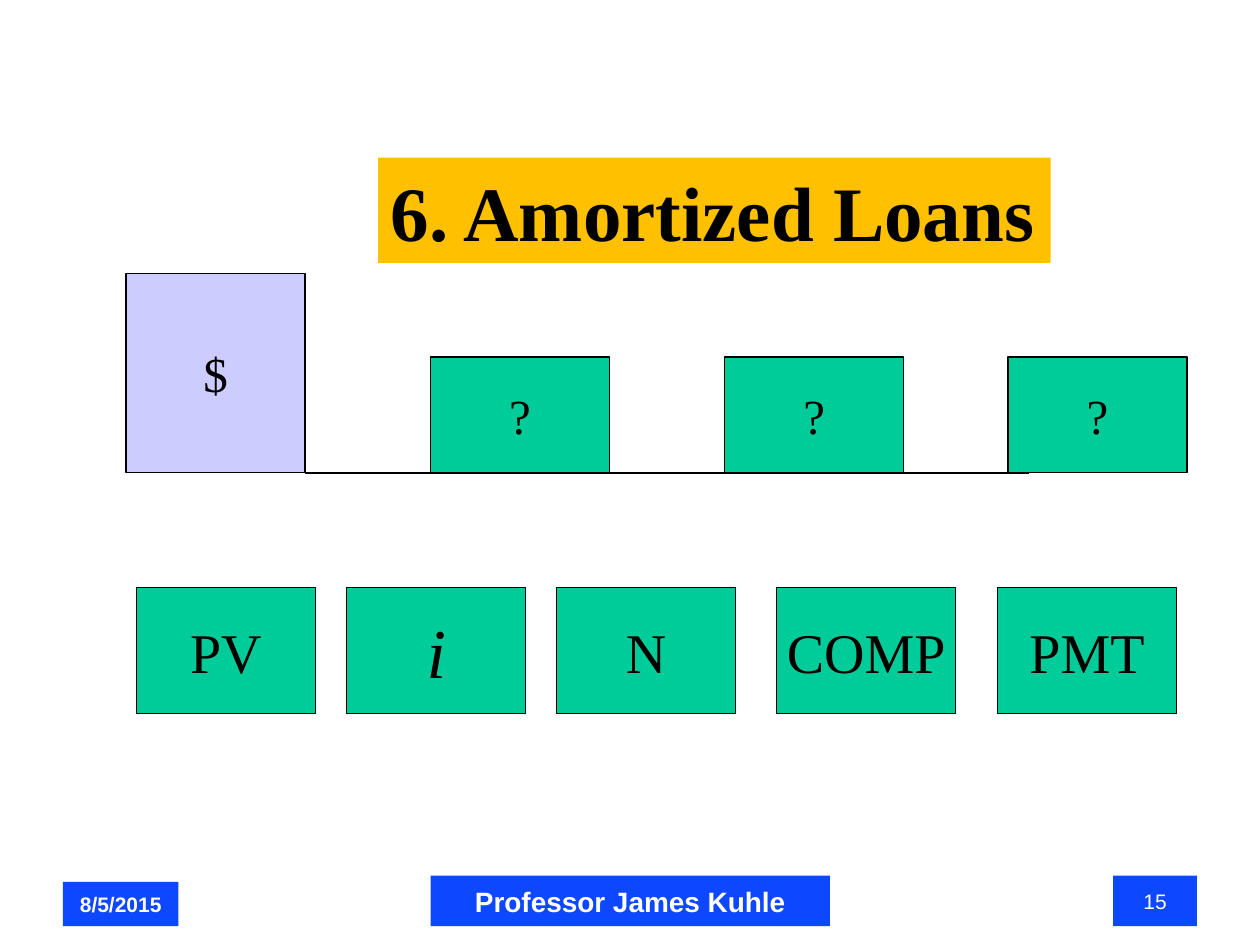
"""Build the amortized loans slide: a cash flow line above a row of calculator keys."""
from pptx import Presentation
from pptx.dml.color import RGBColor
from pptx.enum.shapes import MSO_CONNECTOR as Link, MSO_SHAPE as Kind
from pptx.enum.text import MSO_ANCHOR as Anchor, MSO_AUTO_SIZE as Fit, PP_ALIGN as Align
from pptx.oxml.ns import qn
from pptx.util import Cm, Pt
from lxml.etree import SubElement

BLACK = RGBColor(0x00, 0x00, 0x00)
WHITE = RGBColor(0xFF, 0xFF, 0xFF)
GREEN = RGBColor(0x00, 0xCC, 0x99)
LILAC = RGBColor(0xCC, 0xCC, 0xFF)
GOLD = RGBColor(0xFF, 0xC0, 0x00)
BLUE = RGBColor(0x0D, 0x47, 0xFF)
SERIF, SANS = "Times New Roman", "Arial"

TITLE = "6. Amortized Loans"
FLOWS = [("$", 2.54, 4.02, LILAC), ("?", 8.68, 2.33, GREEN),
         ("?", 14.61, 2.33, GREEN), ("?", 20.32, 2.33, GREEN)]
KEYS = [("PV", 2.75), ("i", 6.99), ("N", 11.22), ("COMP", 15.66), ("PMT", 20.11)]
FOOTER = [("8/5/2015", 1.27, 2.33, 0.89, 12, True),
          ("Professor James Kuhle", 8.68, 8.05, 1.02, 16, True),
          ("15", 22.44, 1.69, 1.02, 12, False)]
WIDE = 3.61
BASE = 9.53
KEY_TOP, KEY_TALL = 11.85, 2.54
FOOT = 18.67


def write(shape, text, face, size, color, bold=False, slant=False, align=Align.CENTER):
    frame = shape.text_frame
    frame.text = text
    para = frame.paragraphs[0]
    para.alignment = align
    font = para.font
    font.name, font.size, font.bold, font.italic = face, Pt(size), bold, slant
    font.color.rgb = color
    return frame


def add_box(slide, kind, place, fill, edge=None):
    box = slide.shapes.add_shape(kind, *map(Cm, place))
    box.shadow.inherit = False
    box.fill.solid()
    box.fill.fore_color.rgb = fill
    if edge is None:
        box.line.fill.background()
    else:
        box.line.color.rgb = edge
        box.line.width = Pt(0.75)
    box.text_frame.vertical_anchor = Anchor.MIDDLE
    box.text_frame.word_wrap = edge is None
    return box


def add_title(slide):
    title = slide.shapes.title
    title.left, title.top, title.width, title.height = map(Cm, (7.62, 3.18, 13.56, 2.11))
    title.fill.solid()
    title.fill.fore_color.rgb = GOLD
    frame = write(title, TITLE, SERIF, 44, BLACK, bold=True, align=Align.LEFT)
    frame.word_wrap = False
    frame.vertical_anchor = Anchor.TOP
    frame.auto_size = Fit.SHAPE_TO_FIT_TEXT


def add_axis(slide):
    axis = slide.shapes.add_connector(Link.STRAIGHT, Cm(6.15), Cm(BASE), Cm(20.75), Cm(BASE))
    axis.line.color.rgb = BLACK
    axis.line.width = Pt(1)
    SubElement(axis.line._get_or_add_ln().getparent(), qn("a:effectLst"))


def main():
    deck = Presentation()
    deck.slide_width, deck.slide_height = Cm(25.4), Cm(19.05)
    slide = deck.slides.add_slide(deck.slide_layouts[5])
    add_title(slide)
    for text, left, tall, fill in FLOWS:
        place = left, BASE - tall, WIDE, tall
        box = add_box(slide, Kind.FLOWCHART_PROCESS, place, fill, BLACK)
        write(box, text, SERIF, 28, BLACK)
    for text, left in KEYS:
        box = add_box(slide, Kind.RECTANGLE, (left, KEY_TOP, WIDE, KEY_TALL), GREEN, BLACK)
        rate = text == "i"
        write(box, text, SERIF, 40 if rate else 32, BLACK, slant=rate)
    add_axis(slide)
    for text, left, wide, tall, size, bold in FOOTER:
        box = add_box(slide, Kind.RECTANGLE, (left, FOOT - tall, wide, tall), BLUE)
        write(box, text, SANS, size, WHITE, bold)
    deck.save("out.pptx")


if __name__ == "__main__":
    main()
